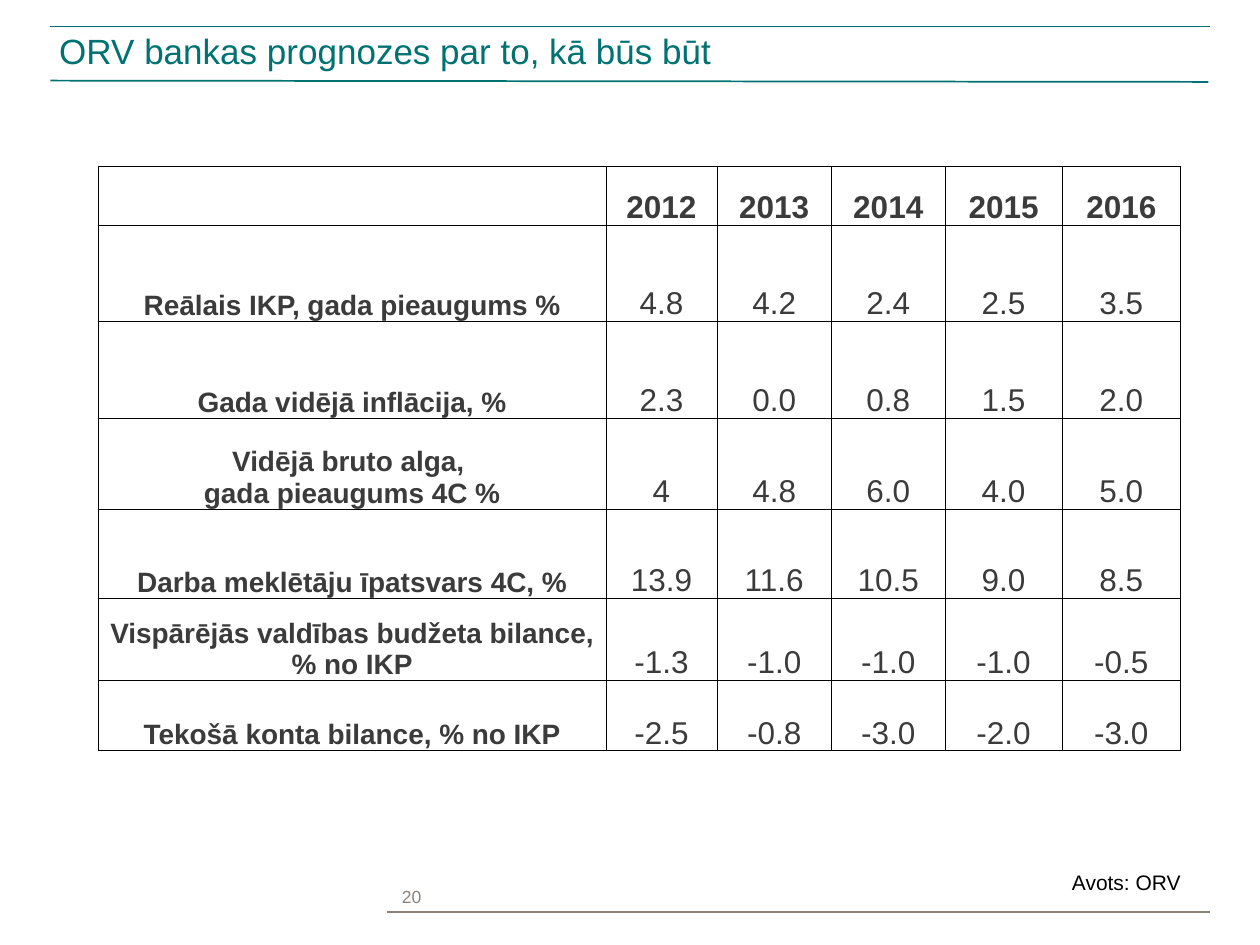
from lxml import etree
from pptx import Presentation
from pptx.dml.color import RGBColor
from pptx.enum.shapes import MSO_CONNECTOR
from pptx.enum.text import MSO_ANCHOR, MSO_AUTO_SIZE, PP_ALIGN
from pptx.oxml import parse_xml
from pptx.oxml.ns import qn
from pptx.util import Inches, Pt

LEFT, CENTER = PP_ALIGN.LEFT, PP_ALIGN.CENTER
TOP, MIDDLE, BOTTOM = MSO_ANCHOR.TOP, MSO_ANCHOR.MIDDLE, MSO_ANCHOR.BOTTOM
NO_FIT = MSO_AUTO_SIZE.NONE
STRAIGHT = MSO_CONNECTOR.STRAIGHT
TEAL, TAUPE, GRAY, BLACK = "007272", "8C8279", "3B3B3B", "000000"
NAMESPACE = "http://schemas.openxmlformats.org/drawingml/2006/main"

# Content
TITLE = "ORV bankas prognozes par to, kā būs būt"
PAGE_NUMBER = "20"
SOURCE = "Avots: ORV"
FORECASTS = [
    ("", "2012", "2013", "2014", "2015", "2016"),
    ("Reālais IKP, gada pieaugums %", "4.8", "4.2", "2.4", "2.5", "3.5"),
    ("Gada vidējā inflācija, %", "2.3", "0.0", "0.8", "1.5", "2.0"),
    ("Vidējā bruto alga, \ngada pieaugums 4C %", "4", "4.8", "6.0", "4.0", "5.0"),
    ("Darba meklētāju īpatsvars 4C, %", "13.9", "11.6", "10.5", "9.0", "8.5"),
    ("Vispārējās valdības budžeta bilance, % no IKP",
     "-1.3", "-1.0", "-1.0", "-1.0", "-0.5"),
    ("Tekošā konta bilance, % no IKP", "-2.5", "-0.8", "-3.0", "-2.0", "-3.0"),
]
COLUMN_WIDTHS = [4.03, 0.88, 0.91, 0.9, 0.93, 0.94]
ROW_HEIGHTS = [0.47, 0.76, 0.77, 0.72, 0.71, 0.65, 0.56]
RULES = [  # x1, y1, x2, y2, colour
    (3.07, 7.24, 9.6, 7.24, TAUPE),
    (0.4, 0.64, 9.59, 0.65, TEAL),
    (0.4, 0.21, 9.6, 0.21, TEAL),
]


def color(hex_value):
    return RGBColor.from_string(hex_value)


def write(frame, text, size, hex_value, align=LEFT, bold=False, spacing=None):
    frame.text = text
    for paragraph in frame.paragraphs:
        paragraph.alignment = align
        paragraph.line_spacing = spacing
        for run in paragraph.runs:
            font = run.font
            for name, value in {"size": Pt(size), "name": "Arial", "bold": bold}.items():
                setattr(font, name, value)
            font.color.rgb = color(hex_value)


def set_frame(frame, anchor, x_margin, y_margin):
    settings = {
        "word_wrap": True, "auto_size": NO_FIT, "vertical_anchor": anchor,
        "margin_left": Inches(x_margin), "margin_right": Inches(x_margin),
        "margin_top": Inches(y_margin), "margin_bottom": Inches(y_margin),
    }
    for name, value in settings.items():
        setattr(frame, name, value)


def place(shape, *box):
    for name, value in zip(("left", "top", "width", "height"), box):
        setattr(shape, name, Inches(value))


def add_rule(slide, x1, y1, x2, y2, hex_value):
    rule = slide.shapes.add_connector(STRAIGHT, *map(Inches, (x1, y1, x2, y2)))
    rule.line.color.rgb = color(hex_value)
    rule.line.width = Pt(1)
    etree.SubElement(rule._element.spPr, qn("a:effectLst"))


def add_borders(cell):
    properties = cell._tc.get_or_add_tcPr()
    for index, side in enumerate("LRTB"):
        properties.insert(index, parse_xml(
            f'<a:ln{side} xmlns:a="{NAMESPACE}" w="{Pt(0.5)}"><a:solidFill>'
            f'<a:srgbClr val="{BLACK}"/></a:solidFill></a:ln{side}>'))


def add_forecasts(slide):
    box = (0.78, 1.32, sum(COLUMN_WIDTHS), sum(ROW_HEIGHTS))
    table = slide.shapes.add_table(
        len(ROW_HEIGHTS), len(COLUMN_WIDTHS), *map(Inches, box)).table
    table.horz_banding = False
    table.first_row = False
    for column, width in zip(table.columns, COLUMN_WIDTHS):
        column.width = Inches(width)
    for row, height in zip(table.rows, ROW_HEIGHTS):
        row.height = Inches(height)

    cell_format = {
        "vertical_anchor": BOTTOM, "margin_left": Inches(0.01),
        "margin_right": Inches(0.01), "margin_top": Inches(0.01), "margin_bottom": 0,
    }
    for r, values in enumerate(FORECASTS):
        for c, value in enumerate(values):
            cell = table.cell(r, c)
            for name, setting in cell_format.items():
                setattr(cell, name, setting)
            is_label = c == 0
            write(cell.text_frame, value, 16 if is_label else 18, GRAY,
                  CENTER, bold=is_label or r == 0)
            cell.fill.background()
            add_borders(cell)


def main():
    deck = Presentation()
    deck.slide_width, deck.slide_height = Inches(10), Inches(7.5)
    slide = deck.slides.add_slide(deck.slide_layouts[5])

    # Rules around the title and above the bottom edge
    for rule in RULES:
        add_rule(slide, *rule)

    # Title
    title = slide.shapes.title
    place(title, 0.4, 0.21, 9.19, 0.44)
    set_frame(title.text_frame, MIDDLE, 0.07, 0.04)
    write(title.text_frame, TITLE, 20, TEAL, spacing=0.8)

    # Page number
    number = slide.shapes.add_textbox(*map(Inches, (3.12, 6.96, 0.5, 0.28)))
    set_frame(number.text_frame, BOTTOM, 0.07, 0.04)
    write(number.text_frame, PAGE_NUMBER, 10, TAUPE)

    # Forecast table
    add_forecasts(slide)

    # Source
    source = slide.shapes.add_textbox(*map(Inches, (8.09, 6.85, 1.7, 0.3)))
    set_frame(source.text_frame, TOP, 0.1, 0.05)
    write(source.text_frame, SOURCE, 12, BLACK, CENTER)

    deck.save("out.pptx")


if __name__ == "__main__":
    main()
